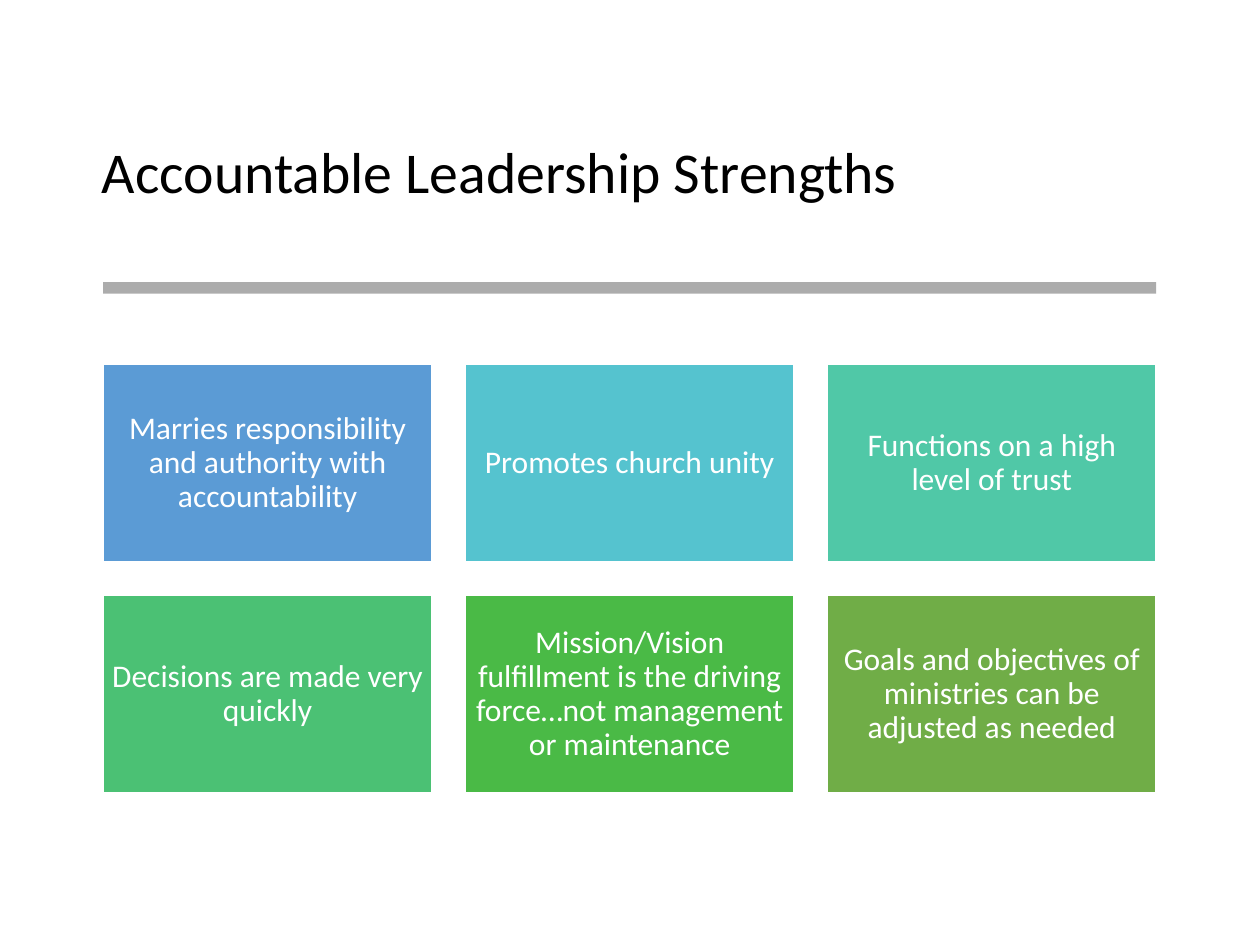
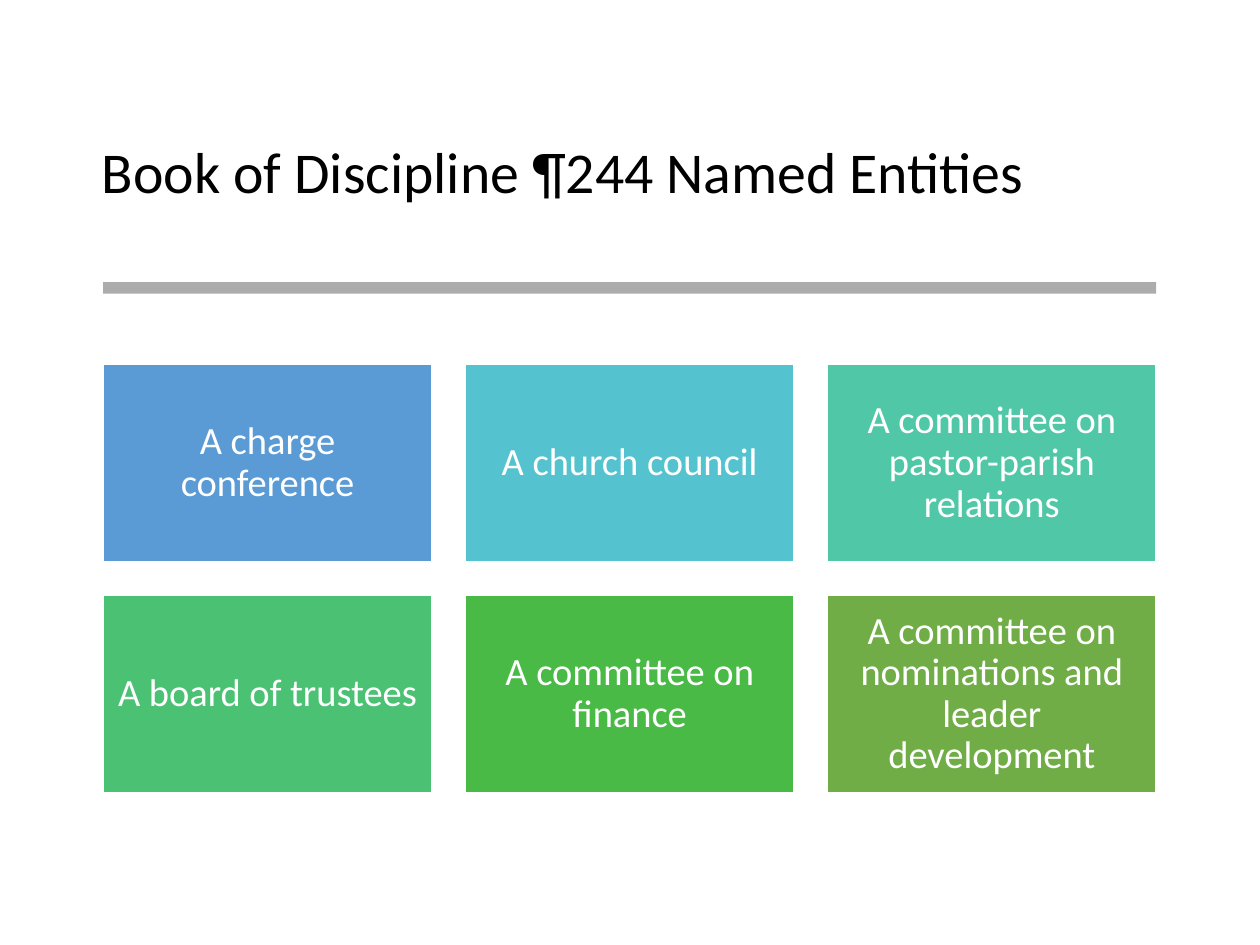
from dataclasses import dataclass

from lxml import etree
from pptx import Presentation
from pptx import util as u
from pptx.dml.color import RGBColor
from pptx.enum import shapes, text
from pptx.oxml.ns import qn


@dataclass(frozen=True)
class Theme:
    font: str = "Calibri"
    ink: str = "000000"
    white: str = "FFFFFF"
    rule: str = "808080"
    alpha: int = 65
    cards: tuple = ("5B9BD5", "55C3CF", "50C8A7", "4BC174", "4ABA46", "70AD47")
    title: int = 33
    lead: float = 0.9


LOOK = Theme()

# Boxes in centimetres: left, top, width, height
HEAD = (1.8, 1.68, 21.77, 3.68)
RULE = (2.08, 5.69, 21.23, 0.23)
GRID = (2.08, 7.34, 21.23, 8.65)
COLS, ROWS, GAP = 3, 2, 0.67

# Title, card text size, card texts
SLIDES = [
    ("Accountable Leadership Strengths", 18, [
        "Marries responsibility and authority with accountability",
        "Promotes church unity",
        "Functions on a high level of trust",
        "Decisions are made very quickly",
        "Mission/Vision fulfillment is the driving force…not management or maintenance",
        "Goals and objectives of ministries can be adjusted as needed",
    ]),
    ("Book of Discipline ¶244 Named Entities", 22, [
        "A charge conference",
        "A church council",
        "A committee on pastor-parish relations",
        "A board of trustees",
        "A committee on finance",
        "A committee on nominations and leader development",
    ]),
]


def place(shape, box):
    shape.left, shape.top, shape.width, shape.height = map(u.Cm, box)


def write(shape, words, size, color, align):
    frame = shape.text_frame
    frame.text = words
    frame.word_wrap = True
    frame.auto_size = text.MSO_AUTO_SIZE.NONE
    frame.vertical_anchor = text.MSO_ANCHOR.MIDDLE
    for para in frame.paragraphs:
        para.alignment = align
        para.line_spacing = LOOK.lead
        for run in para.runs:
            run.font.name = LOOK.font
            run.font.size = u.Pt(size)
            run.font.color.rgb = RGBColor.from_string(color)


def add_rect(slide, box, color):
    rect = slide.shapes.add_shape(shapes.MSO_SHAPE.RECTANGLE, *map(u.Cm, box))
    rect.shadow.inherit = False
    rect.fill.solid()
    rect.fill.fore_color.rgb = RGBColor.from_string(color)
    rect.line.fill.background()
    return rect


def add_head(slide, words, box):
    title = slide.shapes.title
    place(title, box)
    write(title, words, LOOK.title, LOOK.ink, text.PP_ALIGN.LEFT)


def add_rule(slide, box):
    bar = add_rect(slide, box, LOOK.rule)
    # Let the background show through the bar
    tint = bar.fill._xPr.find(".//" + qn("a:srgbClr"))
    etree.SubElement(tint, qn("a:alpha")).set("val", str(LOOK.alpha * 1000))


def add_cards(slide, words, size, box):
    left, top, width, height = box
    wide = (width - GAP * (COLS - 1)) / COLS
    high = (height - GAP * (ROWS - 1)) / ROWS
    for i, (line, color) in enumerate(zip(words, LOOK.cards)):
        row, col = divmod(i, COLS)
        spot = (left + col * (wide + GAP), top + row * (high + GAP), wide, high)
        card = add_rect(slide, spot, color)
        card.line.color.rgb = RGBColor.from_string(LOOK.white)
        card.line.width = u.Pt(1)
        # The inset grows with the text size
        frame = card.text_frame
        frame.margin_left = frame.margin_right = u.Cm(size * 0.01)
        frame.margin_top = frame.margin_bottom = u.Cm(size * 0.01)
        write(card, line, size, LOOK.white, text.PP_ALIGN.CENTER)


def add_slide(deck, title, size, words):
    slide = deck.slides.add_slide(deck.slide_layouts.get_by_name("Title Only"))
    add_head(slide, title, HEAD)
    add_rule(slide, RULE)
    add_cards(slide, words, size, GRID)


def main():
    deck = Presentation()
    deck.slide_width, deck.slide_height = u.Cm(25.4), u.Cm(19.05)
    for title, size, words in SLIDES:
        add_slide(deck, title, size, words)
    deck.save("out.pptx")


if __name__ == "__main__":
    main()
